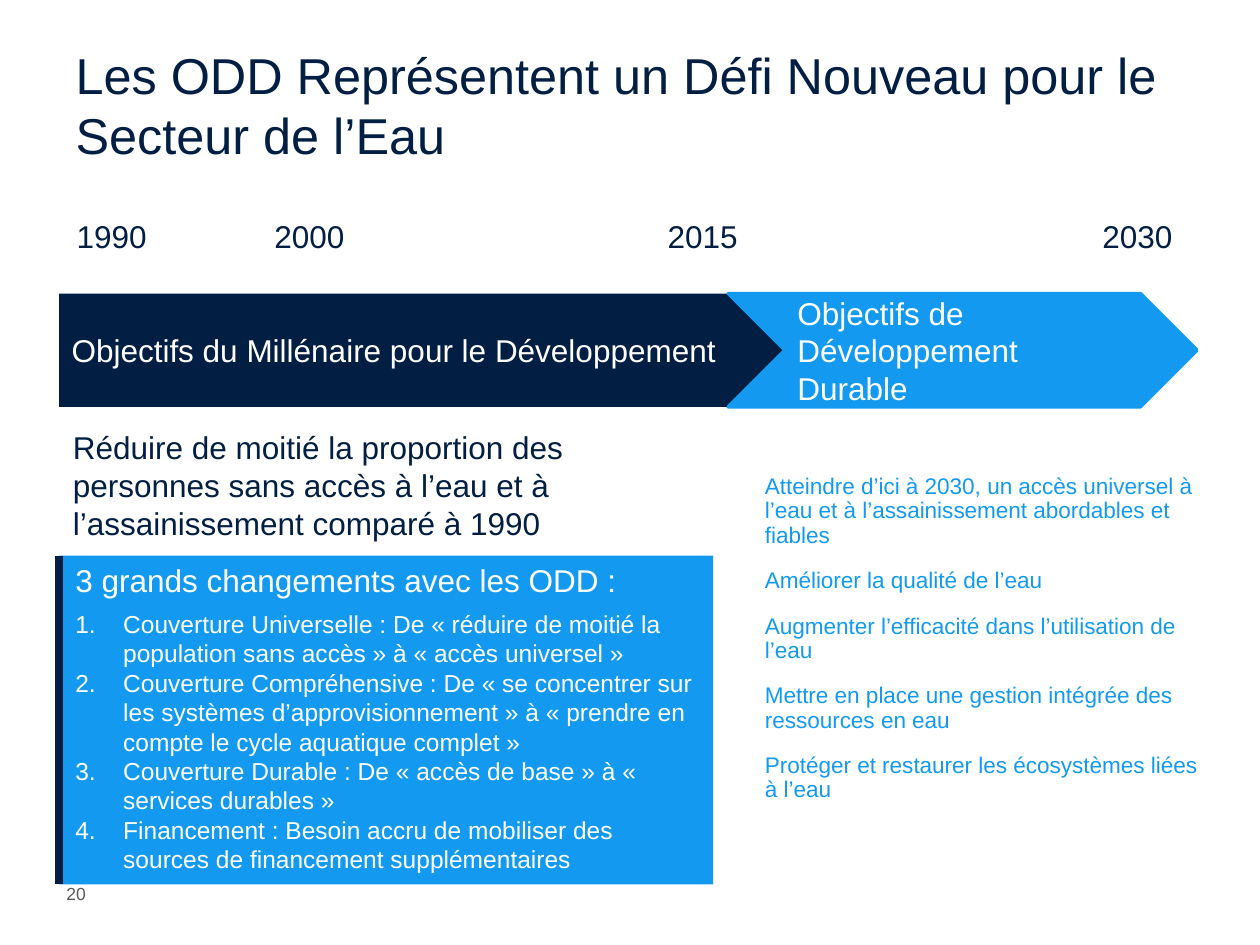
"""Build the slide on the SDG challenge for the water sector."""
import dataclasses

import lxml.etree
import pptx
import pptx.dml.color
import pptx.enum.shapes
import pptx.enum.text
import pptx.oxml.ns
import pptx.util

Inches = pptx.util.Inches
Pt = pptx.util.Pt
Align = pptx.enum.text.PP_ALIGN
Anchor = pptx.enum.text.MSO_ANCHOR
Shape = pptx.enum.shapes.MSO_SHAPE
qn = pptx.oxml.ns.qn


@dataclasses.dataclass(frozen=True)
class Theme:
    font: str = "Arial"
    navy: str = "021F43"
    blue: str = "139AF0"
    white: str = "FFFFFF"
    gray: str = "595959"
    title: float = 28.8
    main: float = 18
    list: float = 14
    goal: float = 12.9
    page: float = 10


THEME = Theme()
YEARS = {"1990": 0.51, "2000": 2.08, "2015": 5.2, "2030": 8.65}
GOALS = [
    "Atteindre d’ici à 2030, un accès universel à l’eau et à l’assainissement abordables et fiables",
    "Améliorer la qualité de l’eau",
    "Augmenter l’efficacité dans l’utilisation de l’eau",
    "Mettre en place une gestion intégrée des ressources en eau",
    "Protéger et restaurer les écosystèmes liées à l’eau",
]
SHIFTS = [
    "Couverture Universelle : De « réduire de moitié la population sans accès » à « accès universel »",
    "Couverture Compréhensive : De « se concentrer sur les systèmes d’approvisionnement » à "
    "« prendre en compte le cycle aquatique complet »",
    "Couverture Durable : De « accès de base » à « services durables »",
    "Financement : Besoin accru de mobiliser des sources de financement supplémentaires",
]


def rgb(code):
    return pptx.dml.color.RGBColor.from_string(code)


def apply(item, values):
    for name, value in values.items():
        setattr(item, name, value)


def place(shape, box):
    names = ("left", "top", "width", "height")
    apply(shape, dict(zip(names, map(Inches, box))))


def mark(para, kind, hang=0, **values):
    """Set the bullet kind and the hanging indent of a paragraph."""
    props = para._p.get_or_add_pPr()
    props.set("marL", str(Inches(hang)))
    props.set("indent", str(-Inches(hang)))
    lxml.etree.SubElement(props, qn(kind), values)


def write(frame, lines, size, color, first=0, **style):
    """Fill a frame with lines, starting at paragraph number first."""
    paras = []
    for row, line in enumerate(lines, first):
        para = frame.add_paragraph() if row else frame.paragraphs[0]
        apply(para, {"alignment": Align.LEFT, **style})
        run = para.add_run()
        apply(run, {"text": line})
        apply(run.font, {"name": THEME.font, "size": Pt(size)})
        run.font.color.rgb = rgb(color)
        paras.append(para)
    return paras


def setup(frame, **style):
    base = {"word_wrap": True, "vertical_anchor": Anchor.TOP,
            "auto_size": pptx.enum.text.MSO_AUTO_SIZE.NONE}
    apply(frame, {**base, **style})
    return frame


def label(slide, box, anchor=Anchor.TOP):
    shape = slide.shapes.add_textbox(*map(Inches, box))
    return setup(shape.text_frame, vertical_anchor=anchor)


def block(slide, kind, box, color, text="", edge=0):
    """Add a filled shape with an optional text and outline."""
    shape = slide.shapes.add_shape(kind, *map(Inches, box))
    shape.shadow.inherit = False
    shape.fill.solid()
    shape.fill.fore_color.rgb = rgb(color)
    if edge:
        shape.line.color.rgb = rgb(color)
        shape.line.width = Pt(edge)
    else:
        shape.line.fill.background()
    frame = setup(shape.text_frame, vertical_anchor=Anchor.MIDDLE)
    if text:
        write(frame, [text], THEME.main, THEME.white)


def rule(slide, start, end, color, width):
    line = slide.shapes.add_connector(
        pptx.enum.shapes.MSO_CONNECTOR.STRAIGHT, *map(Inches, start + end))
    line.line.color.rgb = rgb(color)
    line.line.width = Pt(width)
    lxml.etree.SubElement(line._element.spPr, qn("a:effectLst"))


def heads(slide):
    """Fill the title and the list of goals."""
    title, body = slide.shapes.title, slide.placeholders[1]
    place(title, (0.5, 0.3, 9, 0.78))
    write(setup(title.text_frame),
          ["Les ODD Représentent un Défi Nouveau pour le Secteur de l’Eau"],
          THEME.title, THEME.navy)
    place(body, (5.97, 3.1, 3.72, 3.46))
    frame = setup(body.text_frame, margin_top=Inches(0.67))
    for para in write(frame, GOALS, THEME.goal, THEME.blue, line_spacing=0.9,
                      space_before=Pt(6), space_after=Pt(6)):
        mark(para, "a:buNone")


def arrows(slide):
    """Draw the timeline and its years."""
    block(slide, Shape.PENTAGON, (0.47, 2.33, 5.76, 0.9), THEME.navy,
          "Objectifs du Millénaire pour le Développement")
    block(slide, Shape.CHEVRON, (5.78, 2.33, 3.72, 0.9), THEME.blue,
          "Objectifs de Développement Durable", 2)
    for year, left in YEARS.items():
        write(label(slide, (left, 1.67, 0.9, 0.4)), [year], THEME.main, THEME.navy)


def panel(slide):
    """Draw the panel of the three changes."""
    block(slide, Shape.RECTANGLE, (0.47, 4.41, 5.19, 2.61), THEME.blue)
    frame = label(slide, (0.5, 4.4, 5.16, 2.57))
    write(frame, ["3 grands changements avec les ODD :"], THEME.main,
          THEME.white, space_after=Pt(6))
    for para in write(frame, SHIFTS, THEME.list, THEME.white, first=1):
        mark(para, "a:buAutoNum", 0.38, type="arabicPeriod")
    rule(slide, (0.47, 4.41), (0.47, 7.02), THEME.navy, 4.5)


def main():
    deck = pptx.Presentation()
    apply(deck, {"slide_width": Inches(10), "slide_height": Inches(7.5)})
    slide = deck.slides.add_slide(deck.slide_layouts[1])
    heads(slide)
    arrows(slide)
    write(label(slide, (0.48, 3.35, 4.85, 0.91)),
          ["Réduire de moitié la proportion des personnes sans accès à l’eau "
           "et à l’assainissement comparé à 1990"], THEME.main, THEME.navy)
    panel(slide)
    write(label(slide, (0.25, 6.89, 0.53, 0.4), Anchor.MIDDLE), ["20"],
          THEME.page, THEME.gray, alignment=Align.RIGHT)
    deck.save("out.pptx")


if __name__ == "__main__":
    main()
